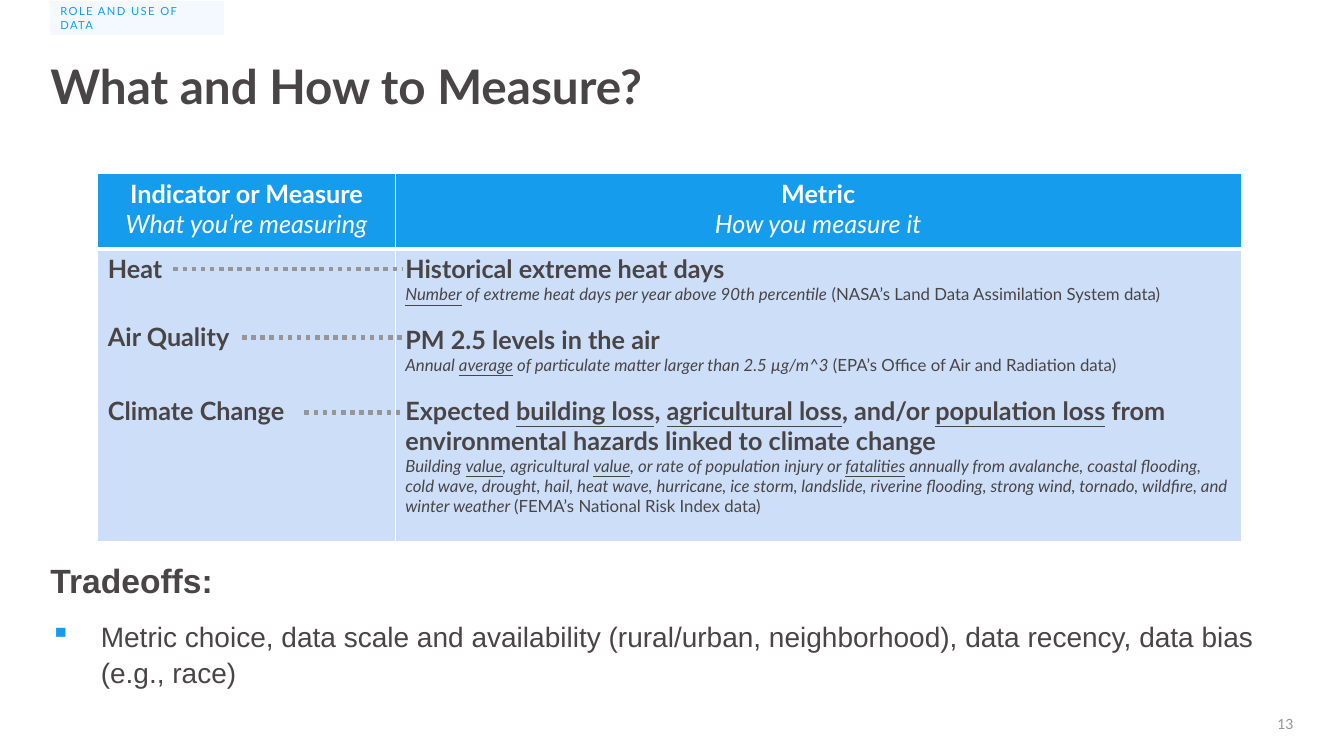
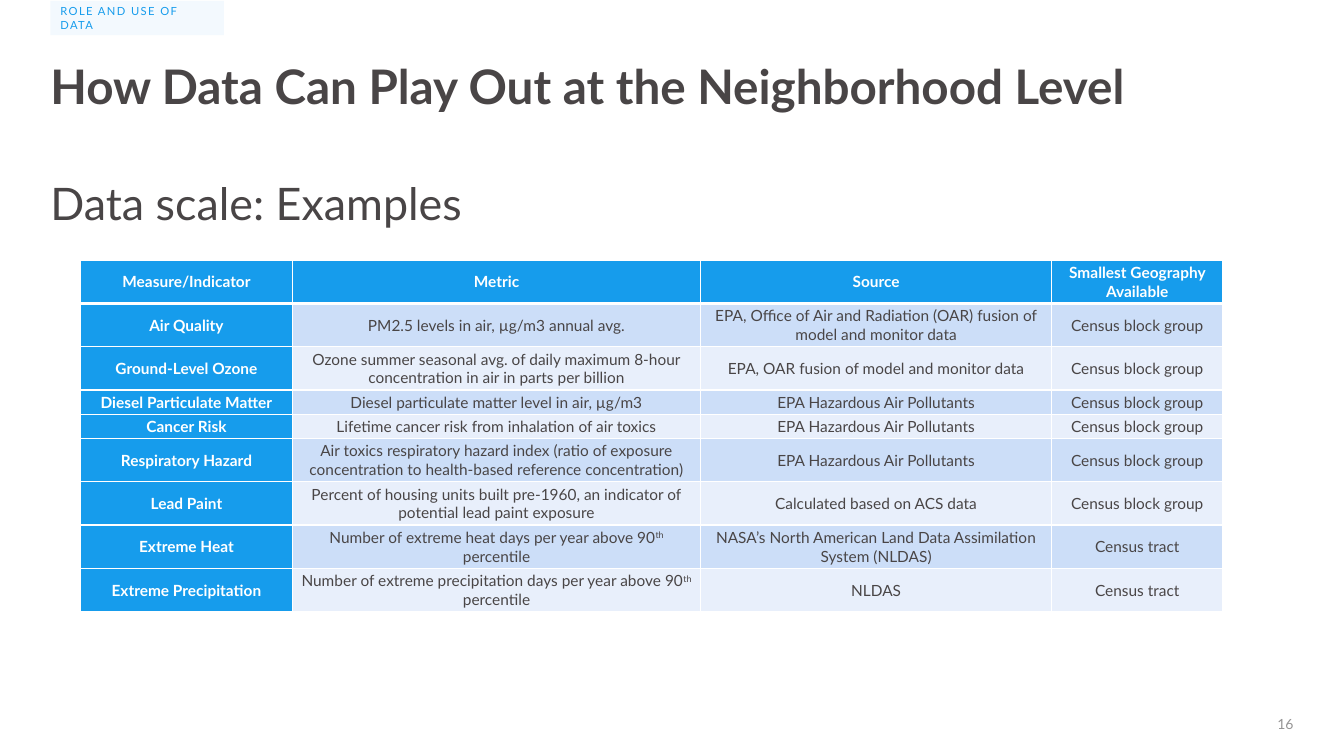
from lxml import etree
from pptx import Presentation
from pptx.dml.color import RGBColor
from pptx.enum.dml import MSO_LINE
from pptx.enum.shapes import MSO_CONNECTOR, MSO_SHAPE
from pptx.enum.text import MSO_ANCHOR, PP_ALIGN
from pptx.oxml.ns import qn
from pptx.util import Inches, Pt

LEFT, CENTER, RIGHT = PP_ALIGN.LEFT, PP_ALIGN.CENTER, PP_ALIGN.RIGHT
TOP, MIDDLE = MSO_ANCHOR.TOP, MSO_ANCHOR.MIDDLE
STRAIGHT, RECT, DOTS = MSO_CONNECTOR.STRAIGHT, MSO_SHAPE.RECTANGLE, MSO_LINE.ROUND_DOT

BLUE, INK, WHITE, GRAY, DOT = "169CEC", "494546", "FFFFFF", "959494", "969696"
BAND_DARK, BAND_LIGHT = "CCDEF8", "E8EFFB"
FONT, BODY_FONT = "Lato", "Arial"
WIDTH, HEIGHT = 13.33, 7.5
MARGIN = 0.5
CONTENT_W = WIDTH - 2 * MARGIN

BOLD, ITALIC = dict(bold=True), dict(italic=True)
UNDER, SUPER = dict(underline=True), dict(baseline=30)


def rgb(color):
    return RGBColor.from_string(color)


def sub(parent, tag, **attrs):
    return etree.SubElement(parent, qn(tag), attrs)


def add_run(p, text, size=18, color=INK, font=FONT, bold=False, italic=False,
            underline=False, baseline=0, spacing=0):
    r = p.add_run()
    r.text = text
    r.font.size, r.font.name, r.font.color.rgb = Pt(size), font, rgb(color)
    r.font.bold, r.font.italic, r.font.underline = bold, italic, underline
    rpr = r._r.get_or_add_rPr()
    if baseline:
        rpr.set("baseline", str(baseline * 1000))
    if spacing:
        rpr.set("spc", str(spacing * 100))


def add_text(tf, content, align=LEFT, before=0, after=0, line=None, bullet=None, **fmt):
    """Add a paragraph; content is a string or a list of strings and (string, format)."""
    p = tf.paragraphs[0]
    if p.runs:
        p = tf.add_paragraph()
    p.alignment, p.line_spacing = align, line
    p.space_before, p.space_after = Pt(before), Pt(after)
    if bullet:
        ppr = p._p.get_or_add_pPr()
        ppr.set("marL", str(Inches(0.5)))
        ppr.set("indent", str(-Inches(0.5)))
        sub(sub(ppr, "a:buClr"), "a:srgbClr", val=BLUE)
        sub(ppr, "a:buChar", char=bullet)
    for part in [content] if isinstance(content, str) else content:
        text, extra = (part, {}) if isinstance(part, str) else part
        add_run(p, text, **{**fmt, **extra})


def set_frame(tf, insets=(0, 0, 0, 0), anchor=TOP):
    tf.word_wrap, tf.vertical_anchor = True, anchor
    tf.margin_left, tf.margin_top, tf.margin_right, tf.margin_bottom = map(Inches, insets)
    return tf


def text_box(s, box, insets=(0, 0, 0, 0), anchor=TOP):
    return set_frame(s.shapes.add_textbox(*map(Inches, box)).text_frame, insets, anchor)


def section_tag(s, box, text):
    sp = s.shapes.add_shape(RECT, *map(Inches, box))
    sp.shadow.inherit = False
    sp.line.fill.background()
    sp.fill.solid()
    sp.fill.fore_color.rgb = rgb(BLUE)
    sub(sp._element.spPr.find(".//" + qn("a:srgbClr")), "a:alpha", val="5000")
    tf = set_frame(sp.text_frame, (0.1, 0.1, 0.1, 0.1), MIDDLE)
    add_text(tf, text, size=8, color=BLUE, spacing=1)


def new_slide(prs, title, number):
    """Blank slide with the section tag, title and page number."""
    s = prs.slides.add_slide(prs.slide_layouts[6])
    section_tag(s, (MARGIN, 0.01, 1.72, 0.34), "ROLE AND USE OF DATA")
    tf = text_box(s, (MARGIN, 0.58, CONTENT_W, 1.27), (0, 0.05, 0, 0.05))
    add_text(tf, title, line=0.9, size=34, bold=True)
    tf = text_box(s, (WIDTH - MARGIN - 3, 7.07, 3, 0.23), anchor=MIDDLE)
    add_text(tf, str(number), align=RIGHT, size=10, color=GRAY)
    return s


def style_cell(cell, fill, top=1, bottom=1):
    cell.fill.solid()
    cell.fill.fore_color.rgb = rgb(fill)
    tcpr = cell._tc.get_or_add_tcPr()
    edges = (("L", 1), ("R", 1), ("T", top), ("B", bottom))
    for i, (side, width) in enumerate(edges):
        ln = etree.Element(qn("a:ln" + side), w=str(Pt(width)))
        sub(sub(ln, "a:solidFill"), "a:srgbClr", val=WHITE)
        tcpr.insert(i, ln)


def add_grid(s, left, top, cols, rows, fill_of):
    """Table with a thick rule under its header; fill_of gives a cell's fill."""
    frame = s.shapes.add_table(len(rows), len(cols), Inches(left), Inches(top),
                               Inches(sum(cols)), Inches(sum(rows)))
    table = frame.table
    table.first_row = table.horz_banding = False
    for col, width in zip(table.columns, cols):
        col.width = Inches(width)
    for i, height in enumerate(rows):
        table.rows[i].height = Inches(height)
        for j in range(len(cols)):
            style_cell(table.cell(i, j), fill_of(i, j),
                       3 if i == 1 else 1, 3 if i == 0 else 1)
    return table


def dotted_leader(s, x1, x2, y):
    ln = s.shapes.add_connector(STRAIGHT, *map(Inches, (x1, y, x2, y)))
    ln.line.color.rgb, ln.line.width, ln.line.dash_style = rgb(DOT), Pt(3.25), DOTS
    sub(ln._element.spPr, "a:effectLst")


HEADINGS = [("Indicator or Measure", "What you’re measuring"),
            ("Metric", "How you measure it")]
# Indicator, space before it, metric, explanation, leader start and height
INDICATORS = [
    ("Heat", 0, ["Historical extreme heat days"],
     [("Number", UNDER), " of extreme heat days per year above 90th percentile",
      (" (NASA’s Land Data Assimilation System data)", dict(italic=False))],
     1.72, 2.67),
    ("Air Quality", 26.4, ["PM 2.5 levels in the air"],
     ["Annual ", ("average", UNDER), " of particulate matter larger than 2.5 µg/m^3 ",
      ("(EPA’s Office of Air and Radiation data)", dict(italic=False))],
     2.4, 3.35),
    ("Climate Change", 31.2,
     ["Expected ", ("building loss", UNDER), ", ", ("agricultural loss", UNDER),
      ", and/or ", ("population loss", UNDER),
      " from environmental hazards linked to climate change"],
     ["Building ", ("value", UNDER), ", agricultural ", ("value", UNDER),
      ", or rate of population injury or ", ("fatalities", UNDER),
      " annually from avalanche, coastal flooding, cold wave, drought, hail, heat wave, "
      "hurricane, ice storm, landslide, riverine flooding, strong wind, tornado, "
      "wildfire, and winter weather ",
      ("(FEMA’s National Risk Index data)", dict(italic=False))],
     3.02, 4.09),
]


def indicator_table(s, left, top):
    table = add_grid(s, left, top, (2.95, 8.39), (0.75, 2.9),
                     lambda i, j: BAND_DARK if i else BLUE)
    for j, (name, hint) in enumerate(HEADINGS):
        tf = table.cell(0, j).text_frame
        add_text(tf, name, align=CENTER, color=WHITE, **BOLD)
        add_text(tf, hint, align=CENTER, color=WHITE, **ITALIC)
    names, metrics = (table.cell(1, j).text_frame for j in range(2))
    for name, gap, metric, detail, x, y in INDICATORS:
        add_text(names, name, before=gap, **BOLD)
        add_text(metrics, metric, before=14.4 if gap else 0, **BOLD)
        add_text(metrics, detail, size=12, **ITALIC)
        dotted_leader(s, x, 4, y)


def tradeoffs(s, box):
    tf = text_box(s, box)
    fmt = dict(line=1.08, after=12, font=BODY_FONT)
    add_text(tf, "Tradeoffs:", size=24, bold=True, **fmt)
    add_text(tf, "Metric choice, data scale and availability (rural/urban, neighborhood), "
             "data recency, data bias (e.g., race)", size=20, bullet="▪", **fmt)


BLOCK, TRACT = "Census block group", "Census tract"
POLLUTANTS = "EPA Hazardous Air Pollutants"
SCALE_ROWS = [
    ("Measure/Indicator", "Metric", "Source", "Smallest Geography Available"),
    ("Air Quality", "PM2.5 levels in air, µg/m3 annual avg.",
     "EPA, Office of Air and Radiation (OAR) fusion of model and monitor data", BLOCK),
    ("Ground-Level Ozone", "Ozone summer seasonal avg. of daily maximum 8-hour "
     "concentration in air in parts per billion",
     "EPA, OAR fusion of model and monitor data", BLOCK),
    ("Diesel Particulate Matter", "Diesel particulate matter level in air, µg/m3",
     POLLUTANTS, BLOCK),
    ("Cancer Risk", "Lifetime cancer risk from inhalation of air toxics",
     POLLUTANTS, BLOCK),
    ("Respiratory Hazard", "Air toxics respiratory hazard index (ratio of exposure "
     "concentration to health-based reference concentration)", POLLUTANTS, BLOCK),
    ("Lead Paint", "Percent of housing units built pre-1960, an indicator of "
     "potential lead paint exposure", "Calculated based on ACS data", BLOCK),
    ("Extreme Heat",
     ["Number of extreme heat days per year above 90", ("th", SUPER), " percentile"],
     "NASA’s North American Land Data Assimilation System (NLDAS)", TRACT),
    ("Extreme Precipitation",
     ["Number of extreme precipitation days per year above 90", ("th", SUPER),
      " percentile"], "NLDAS", TRACT),
]
SINGLE_LINE_ROWS = (3, 4)


def scale_fill(i, j):
    if i == 0 or j == 0:
        return BLUE
    return BAND_DARK if i % 2 else BAND_LIGHT


def scale_table(s, left, top):
    heights = [0.24 if i in SINGLE_LINE_ROWS else 0.43 for i in range(len(SCALE_ROWS))]
    table = add_grid(s, left, top, (2.1, 4.05, 3.48, 1.7), heights, scale_fill)
    for i, row in enumerate(SCALE_ROWS):
        for j, content in enumerate(row):
            cell = table.cell(i, j)
            cell.vertical_anchor = MIDDLE
            cell.margin_left = cell.margin_right = Inches(0.06)
            cell.margin_top = cell.margin_bottom = 0
            head = i == 0 or j == 0
            add_text(cell.text_frame, content, align=CENTER, size=11, bold=head,
                     color=WHITE if head else INK)


def measure_slide(prs):
    s = new_slide(prs, "What and How to Measure?", 13)
    indicator_table(s, 0.97, 1.72)
    tradeoffs(s, (MARGIN, 5.52, CONTENT_W, 1.32))


def scale_slide(prs):
    s = new_slide(prs, "How Data Can Play Out at the Neighborhood Level", 16)
    tf = text_box(s, (MARGIN, 1.7, CONTENT_W, 0.86))
    add_text(tf, "Data scale: Examples", line=1.08, size=32)
    scale_table(s, 0.8, 2.58)


def main():
    prs = Presentation()
    prs.slide_width, prs.slide_height = Inches(WIDTH), Inches(HEIGHT)
    measure_slide(prs)
    scale_slide(prs)
    prs.save("out.pptx")


if __name__ == "__main__":
    main()
